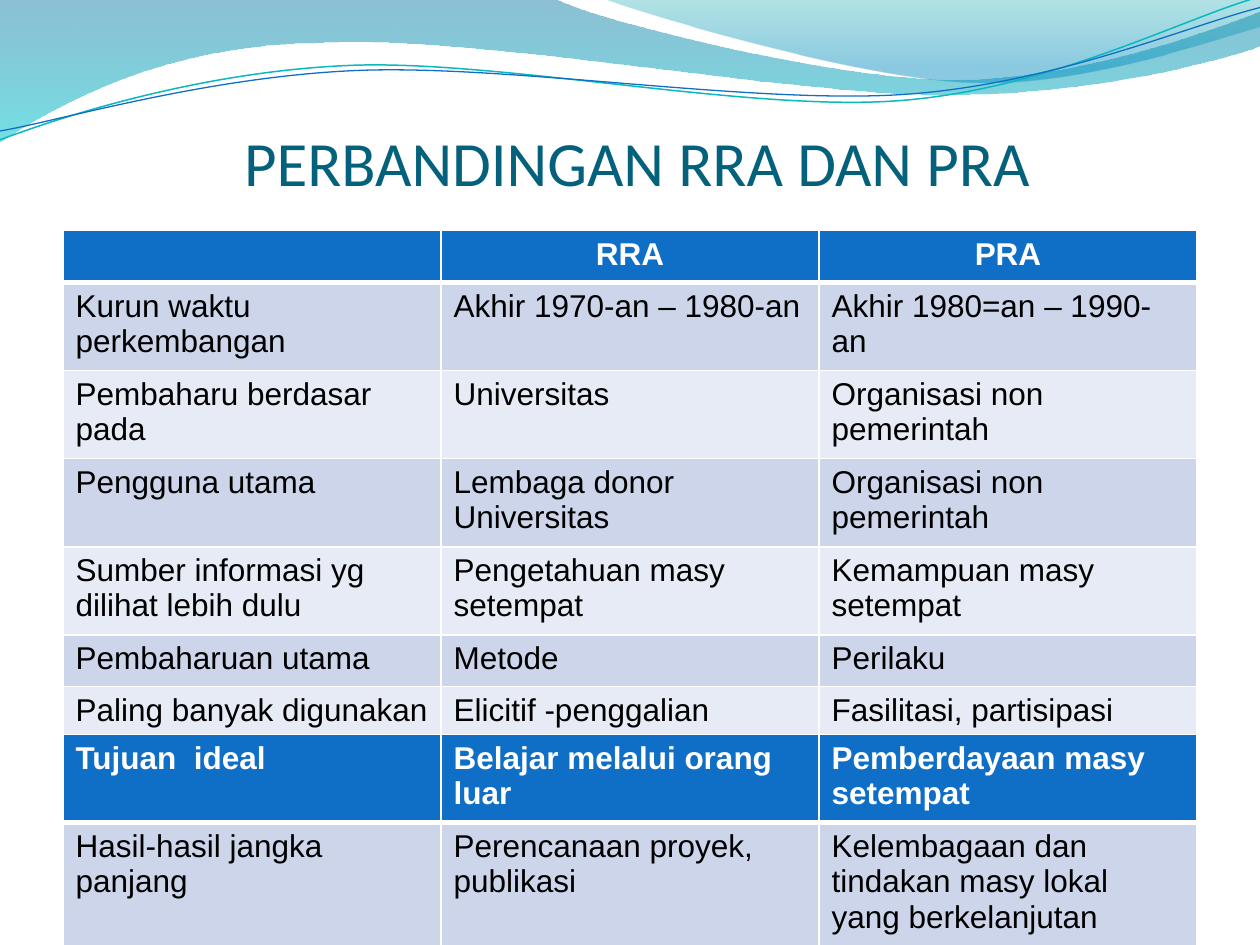
from lxml.etree import SubElement
from pptx import Presentation
from pptx.dml.color import RGBColor
from pptx.enum.text import MSO_ANCHOR, PP_ALIGN
from pptx.oxml import parse_xml
from pptx.oxml.ns import nsdecls, qn
from pptx.util import Inches, Pt

COLORS = {
    "title": "04617B", "header": "0F6FC6", "dark_band": "CCD5EA",
    "light_band": "E7EBF5", "text": "000000", "white": "FFFFFF",
    "teal_line": "0AB8BF", "blue_line": "0F6FC6",
    "sea": "0074A1", "aqua": "00C6CF", "jade": "00A1A9", "sky": "008BBF",
}
UNITS = 100

LEFT_WAVE = [
    (0, -0.01), (4.4, -0.01),
    (4.76, 0.17, 6.64, 0.63, 7.58, 0.63), (8.53, 0.63, 9.58, 0.26, 10, 0.09),
    (10.01, 0.36),
    (9.83, 0.44, 8.7, 0.76, 7.46, 0.75), (6.22, 0.75, 3.82, 0.28, 2.57, 0.34),
    (1.29, 0.35, 0.46, 0.83, -0.01, 1.13), (0, -0.01),
]
RIGHT_WAVE = [
    (4.79, -0.01),
    (5.09, 0.11, 6.82, 0.62, 7.69, 0.65), (8.56, 0.69, 9.61, 0.32, 10, 0.21),
    (10, 0), (4.79, -0.01),
]
TEAL_CURVE = [
    (0, 1.11),
    (0.48, 0.93, 1.58, 0.57, 2.77, 0.52), (3.95, 0.47, 5.93, 0.89, 7.13, 0.8),
    (8.33, 0.71, 9.38, 0.15, 9.98, -0.02),
]
BLUE_CURVE = [
    (0, 1.04),
    (0.47, 0.96, 1.64, 0.61, 2.83, 0.56), (4.03, 0.51, 5.97, 0.83, 7.17, 0.75),
    (8.36, 0.67, 9.41, 0.21, 10, 0.06),
]

COMPARISON = [
    ("", "RRA", "PRA"),
    ("Kurun waktu perkembangan", "Akhir 1970-an – 1980-an", "Akhir 1980=an – 1990-an"),
    ("Pembaharu berdasar pada", "Universitas", "Organisasi non pemerintah"),
    ("Pengguna utama", "Lembaga donor Universitas", "Organisasi non pemerintah"),
    ("Sumber informasi yg dilihat lebih dulu", "Pengetahuan masy setempat",
     "Kemampuan masy setempat"),
    ("Pembaharuan utama", "Metode", "Perilaku"),
    ("Paling banyak digunakan", "Elicitif -penggalian", "Fasilitasi, partisipasi"),
]
GOALS = [
    ("Tujuan  ideal", "Belajar melalui orang luar", "Pemberdayaan masy setempat"),
    ("Hasil-hasil jangka panjang", "Perencanaan proyek, publikasi",
     "Kelembagaan dan tindakan masy lokal yang berkelanjutan"),
]


def rgb(name):
    return RGBColor.from_string(COLORS[name])


def add_outline(s, segments, close):
    segments = [[round(v * UNITS) for v in seg] for seg in segments]
    anchors = [seg[-2:] for seg in segments]
    left, top = (min(values) for values in zip(*anchors))
    builder = s.shapes.build_freeform(*anchors[0], scale=Inches(1) / UNITS)
    builder.add_line_segments(anchors[1:], close=close)
    sp = builder.convert_to_shape()
    sp.shadow.inherit = False
    for line, seg in zip(list(sp.element.spPr.iter(qn("a:lnTo"))), segments[1:]):
        if len(seg) == 6:
            line.tag = qn("a:cubicBezTo")
            for i, (x, y) in enumerate((seg[:2], seg[2:4])):
                pt = line.makeelement(qn("a:pt"), {"x": str(x - left), "y": str(y - top)})
                line.insert(i, pt)
    return sp


def add_wave(s, segments, stops):
    sp = add_outline(s, segments, True)
    sp.line.fill.background()
    sp.fill.gradient()
    sp.fill.gradient_angle = 270
    for stop, (position, color, opacity) in zip(sp.fill.gradient_stops, stops):
        stop.position = position
        stop.color.rgb = rgb(color)
    for node, (_, _, opacity) in zip(sp.element.spPr.iter(qn("a:srgbClr")), stops):
        SubElement(node, qn("a:alpha")).set("val", str(opacity * 1000))


def add_curve(s, segments, color, width):
    sp = add_outline(s, segments, False)
    sp.fill.background()
    sp.line.color.rgb = rgb(color)
    sp.line.width = Pt(width)


def write(tf, text, font, color, align=PP_ALIGN.LEFT):
    p = tf.paragraphs[0]
    p.alignment = align
    r = p.add_run()
    r.text = text
    for name, value in font.items():
        setattr(r.font, name, value)
    r.font.color.rgb = rgb(color)


def set_title(s, text):
    title = s.shapes.title
    box = {"left": 0.5, "top": 0.77, "width": 9, "height": 0.81}
    for name, value in box.items():
        setattr(title, name, Inches(value))
    tf = title.text_frame
    frame = {"margin_left": 0, "margin_top": Inches(0.05), "margin_right": 0,
             "margin_bottom": 0, "vertical_anchor": MSO_ANCHOR.BOTTOM, "word_wrap": True}
    for name, value in frame.items():
        setattr(tf, name, value)
    write(tf, text, {"size": Pt(36), "name": "Calibri"}, "title", PP_ALIGN.CENTER)
    title.element.getparent().append(title.element)


def set_borders(cell, bottom):
    tcPr = cell._tc.get_or_add_tcPr()
    sides = {"lnL": 1, "lnR": 1, "lnT": 1, "lnB": bottom}
    for i, (side, width) in enumerate(sides.items()):
        tcPr.insert(i, parse_xml(
            f'<a:{side} {nsdecls("a")} w="{Pt(width)}"><a:solidFill>'
            f'<a:srgbClr val="{COLORS["white"]}"/></a:solidFill></a:{side}>'))


def add_table(s, top, rows, heights, header_align):
    frame = s.shapes.add_table(len(rows), 3, Inches(0.5), Inches(top),
                               Inches(9), Inches(sum(heights)))
    table = frame.table
    table.horz_banding = False
    for i, (texts, height) in enumerate(zip(rows, heights)):
        table.rows[i].height = Inches(height)
        header = i == 0
        band = "header" if header else "dark_band" if i % 2 else "light_band"
        for cell, text in zip(table.rows[i].cells, texts):
            cell.fill.solid()
            cell.fill.fore_color.rgb = rgb(band)
            set_borders(cell, 3 if header else 1)
            if text:
                write(cell.text_frame, text,
                      {"size": Pt(18), "name": "Arial", "bold": header},
                      "white" if header else "text",
                      header_align if header else PP_ALIGN.LEFT)


def main():
    prs = Presentation()
    prs.slide_width, prs.slide_height = Inches(10), Inches(7.5)
    s = prs.slides.add_slide(prs.slide_layouts[5])
    add_wave(s, LEFT_WAVE, [(0, "sea", 45), (1, "aqua", 55)])
    add_wave(s, RIGHT_WAVE, [(0, "jade", 30), (0.8, "sky", 45)])
    add_curve(s, TEAL_CURVE, "teal_line", 0.85)
    add_curve(s, BLUE_CURVE, "blue_line", 0.75)
    set_title(s, " PERBANDINGAN RRA DAN PRA")
    add_table(s, 1.83, COMPARISON, [0.41] + [0.7] * 4 + [0.41] * 2, PP_ALIGN.CENTER)
    add_table(s, 5.83, GOALS, [0.7, 1], PP_ALIGN.LEFT)
    prs.save("out.pptx")


if __name__ == "__main__":
    main()
